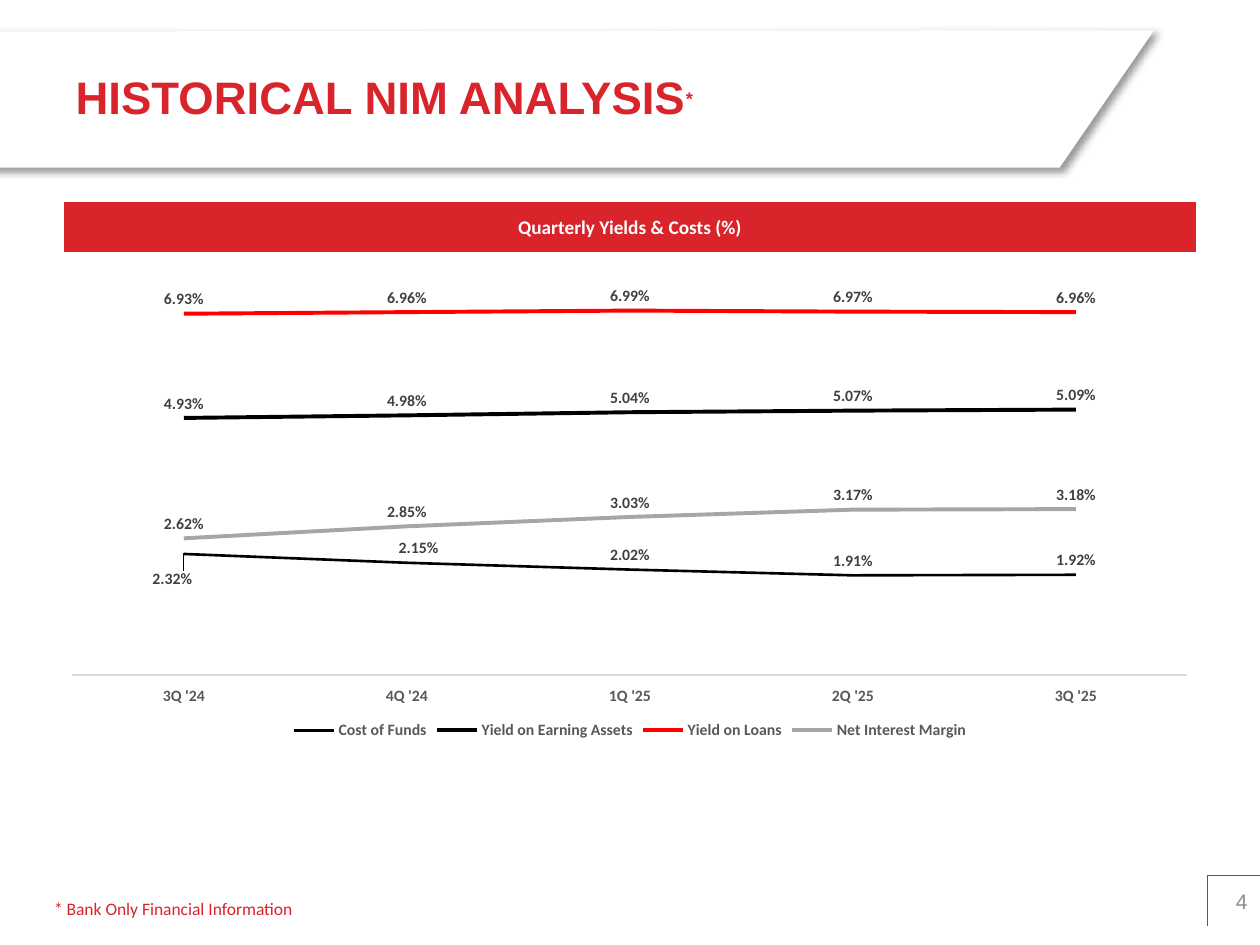
from pptx import Presentation
from pptx.util import Pt
from pptx.dml.color import RGBColor
from pptx.chart.data import CategoryChartData
from pptx.enum.chart import XL_CHART_TYPE, XL_LABEL_POSITION, XL_LEGEND_POSITION, XL_TICK_LABEL_POSITION, XL_TICK_MARK
from pptx.enum.text import MSO_ANCHOR, MSO_AUTO_SIZE, PP_ALIGN
from pptx.oxml import parse_xml
from pptx.oxml.ns import nsdecls

HUES = {"red": "D9242C", "rule": "D91F27", "white": "FFFFFF", "black": "000000", "loan": "FF0000",
        "margin": "A6A6A6", "axis": "D9D9D9", "label": "404040", "text": "595959", "page": "8C8C8C"}
TITLE = [("HISTORICAL NIM ANALYSIS", 26), ("*", 18)]
HEAD = "Quarterly Yields & Costs (%)"
NOTE = "* Bank Only Financial Information"
PAGE = "4"
TERMS = ["3Q '24", "4Q '24", "1Q '25", "2Q '25", "3Q '25"]
RATES = [
    ("Cost of Funds", "black", 1.5, [0.0232, 0.0215, 0.0202, 0.0191, 0.0192]),
    ("Yield on Earning Assets", "black", 2.25, [0.0493, 0.0498, 0.0504, 0.0507, 0.0509]),
    ("Yield on Loans", "loan", 2.25, [0.0693, 0.0696, 0.0699, 0.0697, 0.0696]),
    ("Net Interest Margin", "margin", 2.25, [0.0262, 0.0285, 0.0303, 0.0317, 0.0318]),
]
MOVED = [(0, -0.01, 0.08), (1, 0.01, 0)]
BANNER = [(-12.2, 18), (659.5, 17.3), (605.5, 95.8), (-12.2, 95.8)]
RULES = [(690, 500.4, 690, 529.2), (720, 500.4, 690, 500.4)]


def hue(name):
    return RGBColor.from_string(HUES[name])


def style(font, size, name, bold=False, face="Calibri"):
    font.name, font.bold = face, bold
    if size:
        font.size = Pt(size)
    font.color.rgb = hue(name)


def layout(x, y, w=None, h=None):
    modes = "" if w is None else '<c:layoutTarget val="inner"/><c:xMode val="edge"/><c:yMode val="edge"/>'
    sizes = "" if w is None else f'<c:w val="{w}"/><c:h val="{h}"/>'
    return parse_xml(f'<c:layout {nsdecls("c")}><c:manualLayout>{modes}<c:x val="{x}"/>'
                     f'<c:y val="{y}"/>{sizes}</c:manualLayout></c:layout>')


def add_frame(slide):
    pen = slide.shapes.build_freeform(Pt(BANNER[0][0]), Pt(BANNER[0][1]), scale=1.0)
    pen.add_line_segments([(Pt(x), Pt(y)) for x, y in BANNER[1:]], close=True)
    flag = pen.convert_to_shape()
    flag.fill.solid()
    flag.fill.fore_color.rgb = hue("white")
    flag.line.fill.background()
    flag._element.spPr.append(parse_xml(
        f'<a:effectLst {nsdecls("a")}><a:outerShdw blurRad="{Pt(4)}" dist="{Pt(3)}" dir="2700000" algn="tl" '
        'rotWithShape="0"><a:srgbClr val="000000"><a:alpha val="40000"/></a:srgbClr></a:outerShdw></a:effectLst>'))
    slide.shapes._spTree.insert(2, flag._element)
    for ends in RULES:
        rule = slide.shapes.add_connector(1, *map(Pt, ends))
        rule.line.color.rgb = hue("rule")
        rule.line.width = Pt(0.75)
        rule._element.spPr.append(parse_xml(f'<a:effectLst {nsdecls("a")}/>'))


def add_title(slide):
    title = slide.shapes.title
    title.left, title.top, title.width, title.height = map(Pt, (36, 18, 570.2, 74.2))
    title.text_frame.vertical_anchor = MSO_ANCHOR.MIDDLE
    line = title.text_frame.paragraphs[0]
    line.alignment = PP_ALIGN.LEFT
    style(line.font, None, "red", True, "Arial")
    for text, size in TITLE:
        run = line.add_run()
        run.text = text
        run.font.size = Pt(size)
    run.font._element.set("baseline", "30000")


def add_text(slide, box, text, size, name, face, align, wrap):
    frame = slide.shapes.add_textbox(*map(Pt, box)).text_frame
    frame.word_wrap = wrap
    frame.text = text
    frame.paragraphs[0].alignment = align
    style(frame.paragraphs[0].font, size, name, face=face)
    return frame


def add_head(slide):
    table = slide.shapes.add_table(1, 1, *map(Pt, (36, 115.2, 648, 29.2))).table
    table.horz_banding = table.first_row = False
    cell = table.cell(0, 0)
    cell.text = HEAD
    cell.vertical_anchor = MSO_ANCHOR.MIDDLE
    cell.margin_left = cell.margin_right = cell.margin_top = Pt(0.7)
    cell.margin_bottom = 0
    for side in "LRTB":
        cell._tc.get_or_add_tcPr().append(parse_xml(
            f'<a:ln{side} {nsdecls("a")} w="{Pt(1)}"><a:solidFill><a:srgbClr val="{HUES["white"]}"/>'
            f'</a:solidFill></a:ln{side}>'))
    cell.fill.solid()
    cell.fill.fore_color.rgb = hue("red")
    line = cell.text_frame.paragraphs[0]
    line.alignment = PP_ALIGN.CENTER
    style(line.font, 11, "white", True)


def add_rates(slide):
    data = CategoryChartData(number_format="0.00%")
    data.categories = TERMS
    for name, _, _, vals in RATES:
        data.add_series(name, vals)
    chart = slide.shapes.add_chart(XL_CHART_TYPE.LINE, *map(Pt, (28.1, 141.8, 663.8, 283.7)), data).chart
    style(chart.font, 10, "black")
    chart.has_title = False
    chart.has_legend = True
    chart.legend.position = XL_LEGEND_POSITION.BOTTOM
    chart.legend.include_in_layout = False
    style(chart.legend.font, 9, "text", True)

    terms, scale = chart.category_axis, chart.value_axis
    terms.major_tick_mark = XL_TICK_MARK.NONE
    terms.tick_label_position = XL_TICK_LABEL_POSITION.LOW
    terms.format.line.color.rgb = hue("axis")
    terms.format.line.width = Pt(0.75)
    style(terms.tick_labels.font, 9, "text", True)
    scale.visible = scale.has_major_gridlines = False
    scale.minimum_scale, scale.maximum_scale = 0, 0.08
    scale.tick_labels.number_format = "0.00%"
    scale.tick_labels.number_format_is_linked = False

    area = chart._chartSpace.chart.plotArea
    for old in area.findall("{*}layout"):
        area.remove(old)
    area.insert(0, layout(0.02, 0.02, 0.96, 0.84))

    plot = chart.plots[0]
    plot.vary_by_categories = False
    for row, (_, name, width, _) in zip(plot.series, RATES):
        row.smooth = False
        row.format.line.color.rgb = hue(name)
        row.format.line.width = Pt(width)
        tags = row.data_labels
        tags.show_value = True
        tags.number_format = "0.00%"
        tags.number_format_is_linked = False
        tags.position = XL_LABEL_POSITION.ABOVE
        style(tags.font, 9, "label", True)
    for spot, x, y in MOVED:
        tag = plot.series[0].points[spot].data_label
        tag.position = XL_LABEL_POSITION.ABOVE
        style(tag.font, 9, "label", True)
        tag._dLbl.insert(1, layout(x, y))


def main():
    """Build the margin analysis slide."""
    deck = Presentation()
    deck.slide_width, deck.slide_height = Pt(720), Pt(540)
    slide = deck.slides.add_slide(deck.slide_layouts[5])
    add_frame(slide)
    add_title(slide)
    page = add_text(slide, (690, 500.4, 30, 28.8), PAGE, 12, "page", "Arial", PP_ALIGN.RIGHT, True)
    page.vertical_anchor = MSO_ANCHOR.MIDDLE
    add_head(slide)
    add_rates(slide)
    note = add_text(slide, (23.8, 509.8, 152.6, 19.4), NOTE, 10, "red", "Calibri", PP_ALIGN.LEFT, False)
    note.auto_size = MSO_AUTO_SIZE.SHAPE_TO_FIT_TEXT
    deck.save("out.pptx")


if __name__ == "__main__":
    main()
